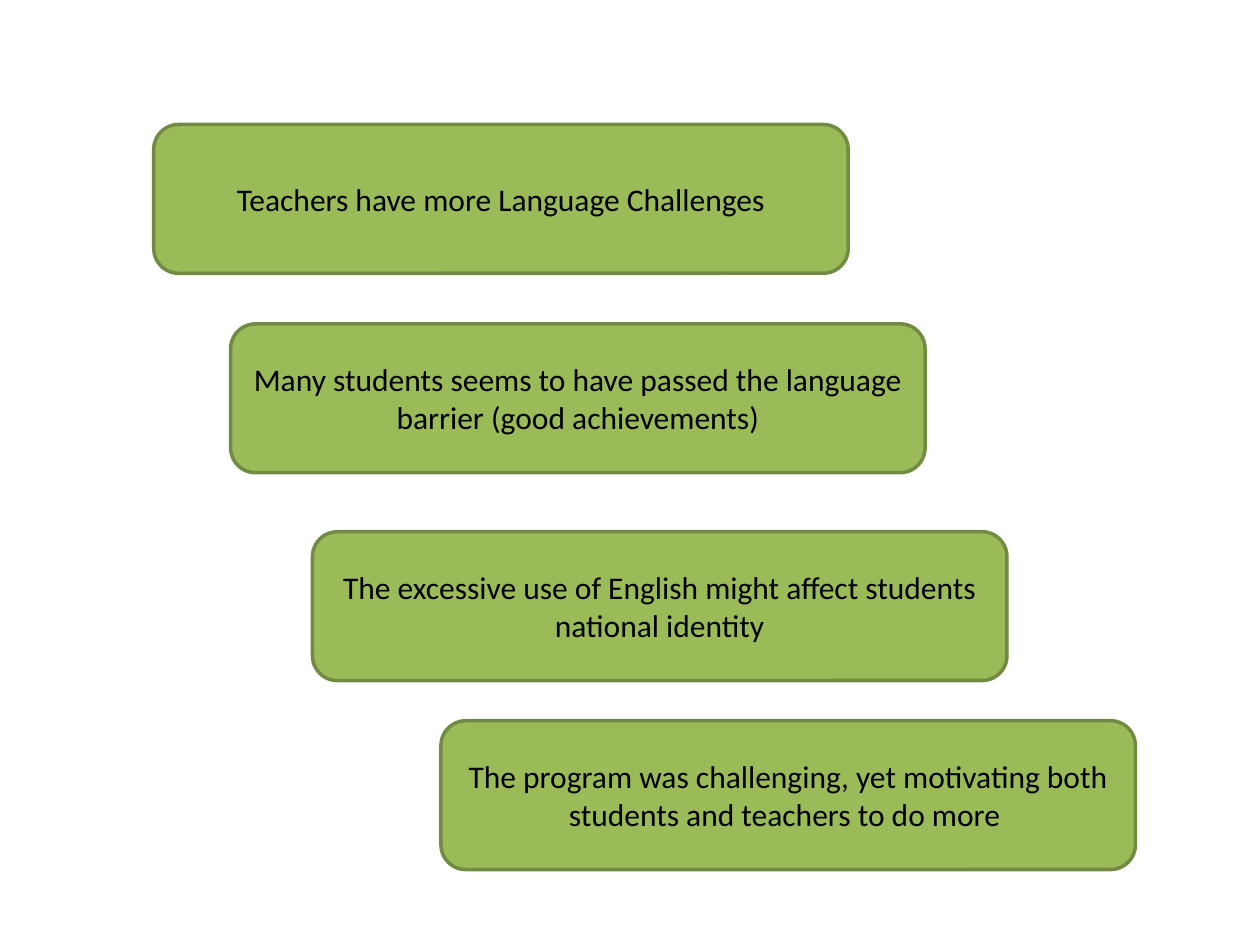
"""Build a slide with four findings in a descending staircase of rounded boxes."""
from dataclasses import dataclass

from pptx import Presentation
from pptx.dml.color import RGBColor
from pptx.enum.shapes import MSO_SHAPE as Preset
from pptx.enum.text import MSO_ANCHOR as Anchor, PP_ALIGN as Align
from pptx.slide import Slide
from pptx.util import Cm, Pt


@dataclass(frozen=True)
class Theme:
    """Colours, type and line sizes of the slide."""
    fill: RGBColor = RGBColor.from_string("9BBB59")
    outline: RGBColor = RGBColor.from_string("738A42")
    ink: RGBColor = RGBColor.from_string("000000")
    font: str = "Calibri"
    text_size: Pt = Pt(18)
    line_width: Pt = Pt(2)


@dataclass(frozen=True)
class Finding:
    """A statement and the top left corner of its box."""
    text: str
    left: Cm
    top: Cm


THEME = Theme()
BOX_WIDTH, BOX_HEIGHT = Cm(14), Cm(3)
FINDINGS = (
    Finding("Teachers have more Language Challenges", Cm(3.1), Cm(2.51)),
    Finding("Many students seems to have passed the language barrier "
            "(good achievements)", Cm(4.65), Cm(6.53)),
    Finding("The excessive use of English might affect students "
            "national identity", Cm(6.3), Cm(10.72)),
    Finding("The program was challenging, yet motivating both students "
            "and teachers to do more ", Cm(8.89), Cm(14.53)),
)


def draw_finding(page: Slide, finding: Finding) -> None:
    """Draw one finding as a rounded box with centred text."""
    box = page.shapes.add_shape(Preset.ROUNDED_RECTANGLE, finding.left,
                                finding.top, BOX_WIDTH, BOX_HEIGHT)
    box.shadow.inherit = False
    box.fill.solid()
    box.fill.fore_color.rgb = THEME.fill
    box.line.color.rgb = THEME.outline
    box.line.width = THEME.line_width
    frame = box.text_frame
    frame.word_wrap = True
    frame.vertical_anchor = Anchor.MIDDLE
    frame.text = finding.text
    para = frame.paragraphs[0]
    para.alignment = Align.CENTER
    for span in para.runs:
        span.font.name = THEME.font
        span.font.size = THEME.text_size
        span.font.color.rgb = THEME.ink


def main() -> None:
    """Create the deck and save it."""
    deck = Presentation()
    deck.slide_width, deck.slide_height = Cm(25.4), Cm(19.05)
    page = deck.slides.add_slide(deck.slide_layouts[6])
    for finding in FINDINGS:
        draw_finding(page, finding)
    deck.save("out.pptx")


if __name__ == "__main__":
    main()
